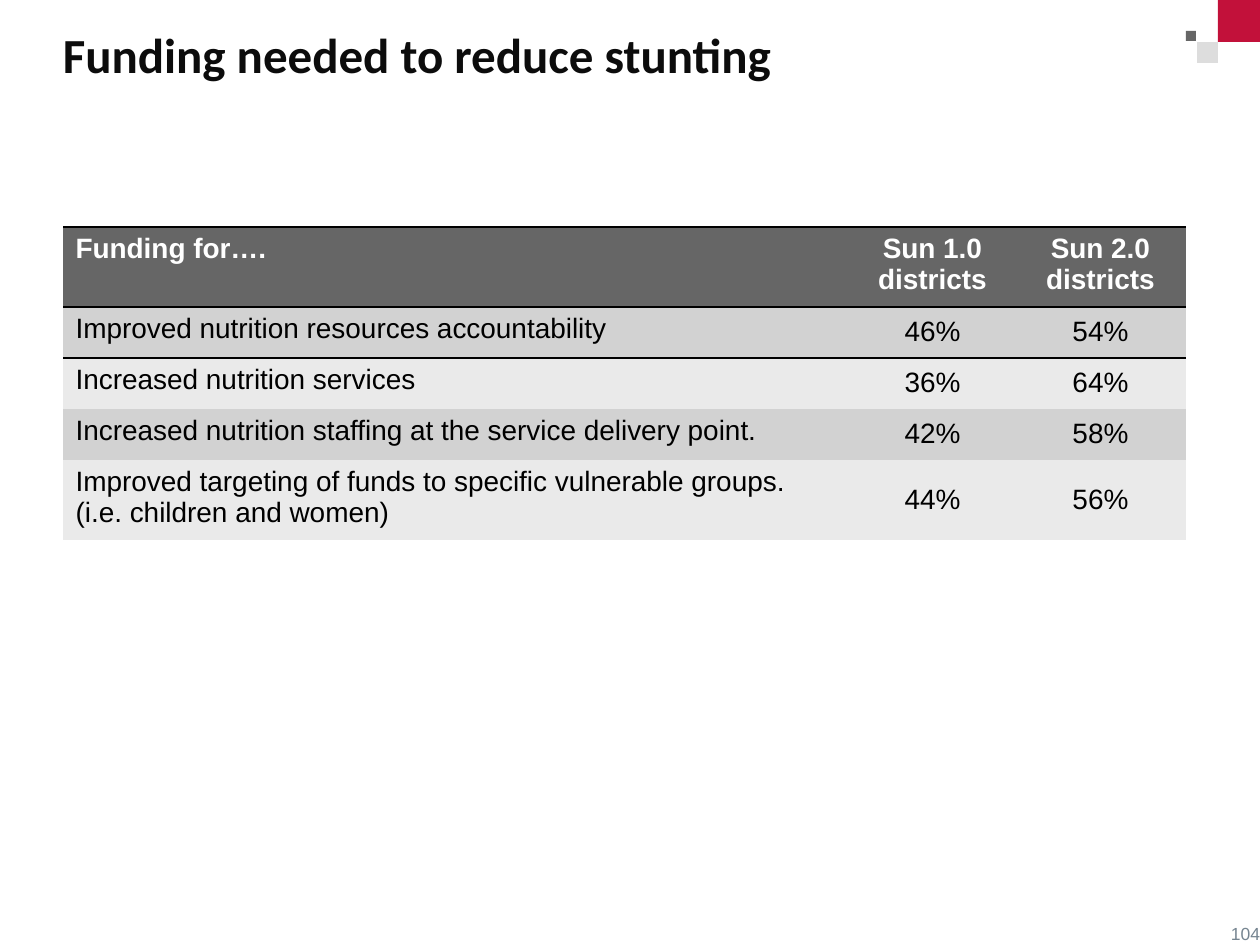
"""Build the slide on funding needed to reduce stunting."""
from lxml import etree
from pptx import Presentation
from pptx import util as u
from pptx.dml import color
from pptx.enum import shapes, text
from pptx.oxml import ns

PX = u.Inches(1) / 126
COLORS = {"red": "C2113A", "dark": "666666", "light": "DDDDDD", "title": "0C0C0C",
          "number": "768591", "white": "FFFFFF", "black": "000000",
          "odd": "D2D2D2", "even": "EAEAEA"}
NO_GRID = "{2D5ABB26-0587-4C30-8999-92F81FD0307C}"
LEFT, CENTER, RIGHT = text.PP_ALIGN.LEFT, text.PP_ALIGN.CENTER, text.PP_ALIGN.RIGHT
TOP, MIDDLE, BOTTOM = (text.MSO_ANCHOR.TOP, text.MSO_ANCHOR.MIDDLE,
                       text.MSO_ANCHOR.BOTTOM)


def px(*lengths):
    return [u.Emu(round(n * PX)) for n in lengths]


def rgb(name):
    return color.RGBColor.from_string(COLORS[name])


class Slide:
    def __init__(self, prs):
        self.s = prs.slides.add_slide(prs.slide_layouts[6])

    def style(self, p, size, fill, bold=False, font="Arial", align=LEFT):
        p.alignment = align
        for r in p.runs:
            r.font.name, r.font.size, r.font.bold = font, u.Pt(size), bold
            r.font.color.rgb = rgb(fill)

    def square(self, x, y, side, fill):
        sp = self.s.shapes.add_shape(shapes.MSO_SHAPE.RECTANGLE, *px(x, y, side, side))
        sp.shadow.inherit = False
        sp.fill.solid()
        sp.fill.fore_color.rgb = rgb(fill)
        sp.line.fill.background()

    def label(self, box, words, anchor=TOP, **style):
        tf = self.s.shapes.add_textbox(*px(*box)).text_frame
        tf.word_wrap = True
        tf.vertical_anchor = anchor
        tf.margin_left = tf.margin_top = tf.margin_right = tf.margin_bottom = 0
        tf.text = words
        self.style(tf.paragraphs[0], **style)

    def rule(self, cell, side):
        ln = etree.SubElement(cell._tc.get_or_add_tcPr(), ns.qn(f"a:{side}"), w="12700")
        fill = etree.SubElement(ln, ns.qn("a:solidFill"))
        etree.SubElement(fill, ns.qn("a:srgbClr"), val=COLORS["black"])

    def cell(self, cell, words, row, col):
        header = row == 0
        if header:
            self.rule(cell, "lnT")
            self.rule(cell, "lnB")
        elif row == 1:
            self.rule(cell, "lnT")
        cell.fill.solid()
        cell.fill.fore_color.rgb = rgb("dark" if header else "odd" if row % 2 else "even")
        if col and not header:
            cell.margin_left = cell.margin_top = cell.margin_right = cell.margin_bottom = 0
            cell.vertical_anchor = MIDDLE
        cell.text = words
        self.style(cell.text_frame.paragraphs[0], 16, "white" if header else "black",
                   bold=header, align=CENTER if col else LEFT)

    def table(self, x, y, widths, heights, rows):
        frame = self.s.shapes.add_table(len(rows), len(widths),
                                        *px(x, y, sum(widths), sum(heights)))
        table = frame.table
        table.first_row = table.horz_banding = False
        table._tbl.tblPr.find(ns.qn("a:tableStyleId")).text = NO_GRID
        for column, width in zip(table.columns, px(*widths)):
            column.width = width
        for row, height in zip(table.rows, px(*heights)):
            row.height = height
        for i, values in enumerate(rows):
            for j, words in enumerate(values):
                self.cell(table.cell(i, j), words, i, j)


def main():
    prs = Presentation()
    prs.slide_width, prs.slide_height = px(1260, 945)
    s = Slide(prs)
    s.square(1186, 31, 10, "dark")
    s.square(1197, 42, 21, "light")
    s.square(1218, 0, 42, "red")
    s.label((63, 25, 1123, 98), "Funding needed to reduce stunting",
            size=28, fill="title", bold=True, font="Calibri")
    s.label((1218, 906, 42, 38), "104", BOTTOM, size=10, fill="number", align=RIGHT)
    s.table(63, 227, (787, 165, 171), (75, 51, 51, 51, 75), [
        ("Funding for….", "Sun 1.0 districts", "Sun 2.0 districts"),
        ("Improved nutrition resources accountability", "46%", "54%"),
        ("Increased nutrition services", "36%", "64%"),
        ("Increased nutrition staffing at the service delivery point.", "42%", "58%"),
        ("Improved targeting of funds to specific vulnerable groups. "
         "(i.e. children and women)", "44%", "56%"),
    ])
    prs.save("out.pptx")


if __name__ == "__main__":
    main()
